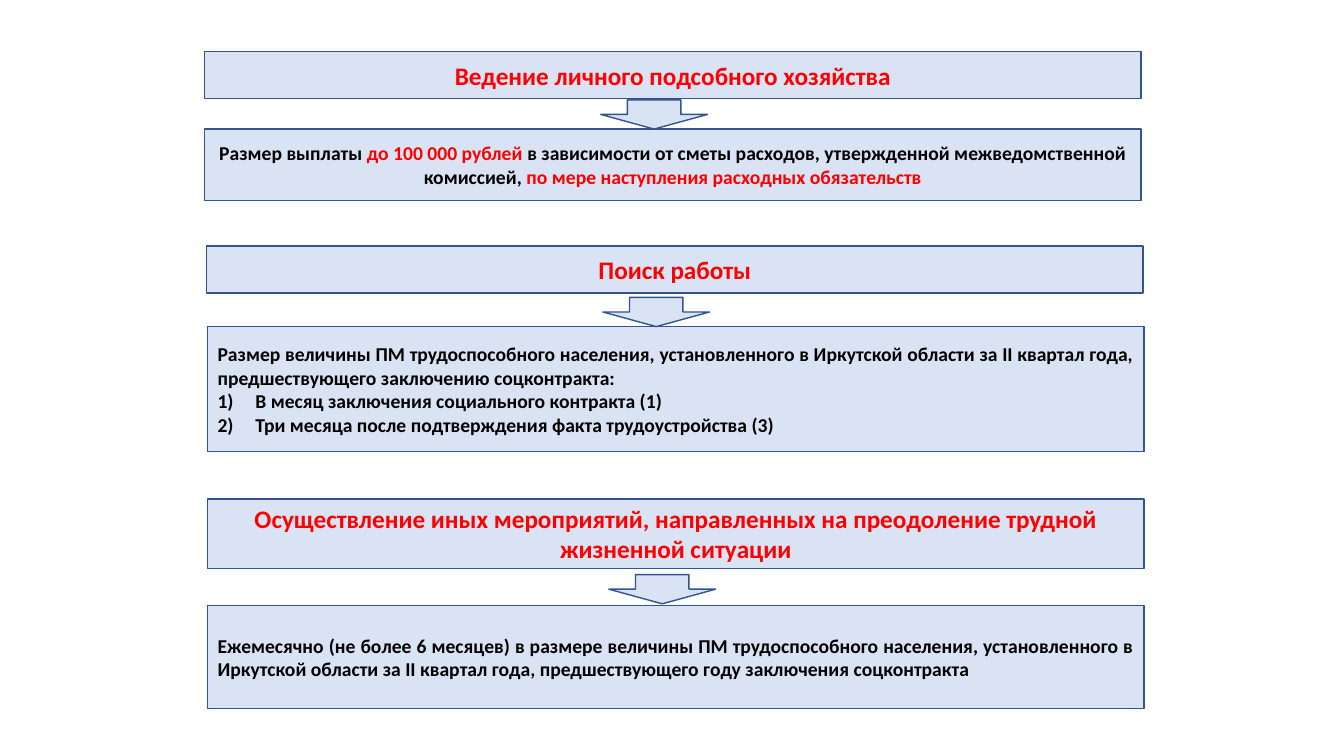
from dataclasses import dataclass

import lxml.etree
import pptx
import pptx.dml.color
import pptx.enum.shapes
import pptx.enum.text
import pptx.oxml.ns
import pptx.util

Pt = pptx.util.Pt
Align = pptx.enum.text.PP_ALIGN
Preset = pptx.enum.shapes.MSO_SHAPE

COLOURS = {"fill": "DAE3F3", "line": "325491", "accent": "FF0000", "text": "000000"}
BOX_WIDTH = 668.9
ARROW_WIDTH, ARROW_HEIGHT = 76.3, 20.9
NUMBER_INDENT = 27


@dataclass
class Span:
    text: str
    accent: bool = False


@dataclass
class Para:
    spans: list[Span]
    align: Align = Align.JUSTIFY
    numbered: bool = False
    size: float = 14
    colour: str = "text"


@dataclass
class Measure:
    """A support measure: a heading, an arrow and the payment details."""
    heading: str
    heading_left: float
    heading_top: float
    heading_height: float
    arrow_left: float
    arrow_top: float
    details_left: float
    details_top: float
    details_height: float
    details: list[Para]


MEASURES = [
    Measure(
        "Ведение личного подсобного хозяйства",
        146.2, 36.7, 33.8, 429.1, 71.3, 146.2, 92.2, 51.1,
        [Para([
            Span("Размер выплаты "),
            Span("до 100 000 рублей ", accent=True),
            Span("в зависимости от сметы расходов, утвержденной "
                 "межведомственной комиссией, "),
            Span("по мере наступления расходных обязательств", accent=True),
        ], Align.CENTER)],
    ),
    Measure(
        "Поиск работы",
        147.6, 175.7, 33.8, 430.6, 212.4, 148.3, 233.3, 89.3,
        [
            Para([Span("Размер величины ПМ трудоспособного населения, "
                       "установленного в Иркутской области за II квартал года, "
                       "предшествующего заключению соцконтракта:")]),
            Para([Span("В месяц заключения социального контракта (1)")],
                 numbered=True),
            Para([Span("Три месяца после подтверждения факта "
                       "трудоустройства (3)")], numbered=True),
        ],
    ),
    Measure(
        "Осуществление иных мероприятий, направленных на преодоление трудной "
        "жизненной ситуации",
        148.3, 356.4, 49.7, 434.9, 410.4, 148.3, 432.7, 73.4,
        [Para([Span("Ежемесячно (не более 6 месяцев) в размере величины ПМ "
                    "трудоспособного населения, установленного в Иркутской "
                    "области за II квартал года, предшествующего году "
                    "заключения соцконтракта")])],
    ),
]


def rgb(name: str) -> pptx.dml.color.RGBColor:
    return pptx.dml.color.RGBColor.from_string(COLOURS[name])


def add_block(page, preset: Preset, left: float, top: float,
              width: float, height: float):
    """Add a filled and outlined preset shape."""
    block = page.shapes.add_shape(preset, Pt(left), Pt(top), Pt(width), Pt(height))
    block.shadow.inherit = False
    block.fill.solid()
    block.fill.fore_color.rgb = rgb("fill")
    block.line.color.rgb = rgb("line")
    block.line.width = Pt(1)
    return block


def number_paragraph(paragraph) -> None:
    """Give the paragraph a hanging automatic number such as 1)."""
    properties = paragraph._p.get_or_add_pPr()
    properties.set("marL", str(Pt(NUMBER_INDENT)))
    properties.set("indent", str(-Pt(NUMBER_INDENT)))
    number = lxml.etree.Element(pptx.oxml.ns.qn("a:buAutoNum"), type="arabicParenR")
    properties.insert(0, number)


def write_paragraph(paragraph, para: Para) -> None:
    paragraph.alignment = para.align
    paragraph.font.name = "Calibri"
    paragraph.font.size = Pt(para.size)
    paragraph.font.bold = True
    paragraph.font.color.rgb = rgb(para.colour)
    if para.numbered:
        number_paragraph(paragraph)
    for span in para.spans:
        run = paragraph.add_run()
        run.text = span.text
        if span.accent:
            run.font.color.rgb = rgb("accent")


def add_box(page, left: float, top: float, height: float,
            paras: list[Para]) -> None:
    box = add_block(page, Preset.RECTANGLE, left, top, BOX_WIDTH, height)
    frame = box.text_frame
    frame.word_wrap = True
    frame.vertical_anchor = pptx.enum.text.MSO_ANCHOR.MIDDLE
    for index, para in enumerate(paras):
        paragraph = frame.add_paragraph() if index else frame.paragraphs[0]
        write_paragraph(paragraph, para)


def add_measure(page, measure: Measure) -> None:
    # Heading
    heading = Para([Span(measure.heading)], Align.CENTER, size=18, colour="accent")
    add_box(page, measure.heading_left, measure.heading_top,
            measure.heading_height, [heading])
    # Payment details
    add_box(page, measure.details_left, measure.details_top,
            measure.details_height, measure.details)
    # Arrow between them
    add_block(page, Preset.DOWN_ARROW, measure.arrow_left, measure.arrow_top,
              ARROW_WIDTH, ARROW_HEIGHT)


def main() -> None:
    deck = pptx.Presentation()
    deck.slide_width, deck.slide_height = Pt(960), Pt(540)
    page = deck.slides.add_slide(deck.slide_layouts[6])
    for measure in MEASURES:
        add_measure(page, measure)
    deck.save("out.pptx")


if __name__ == "__main__":
    main()
